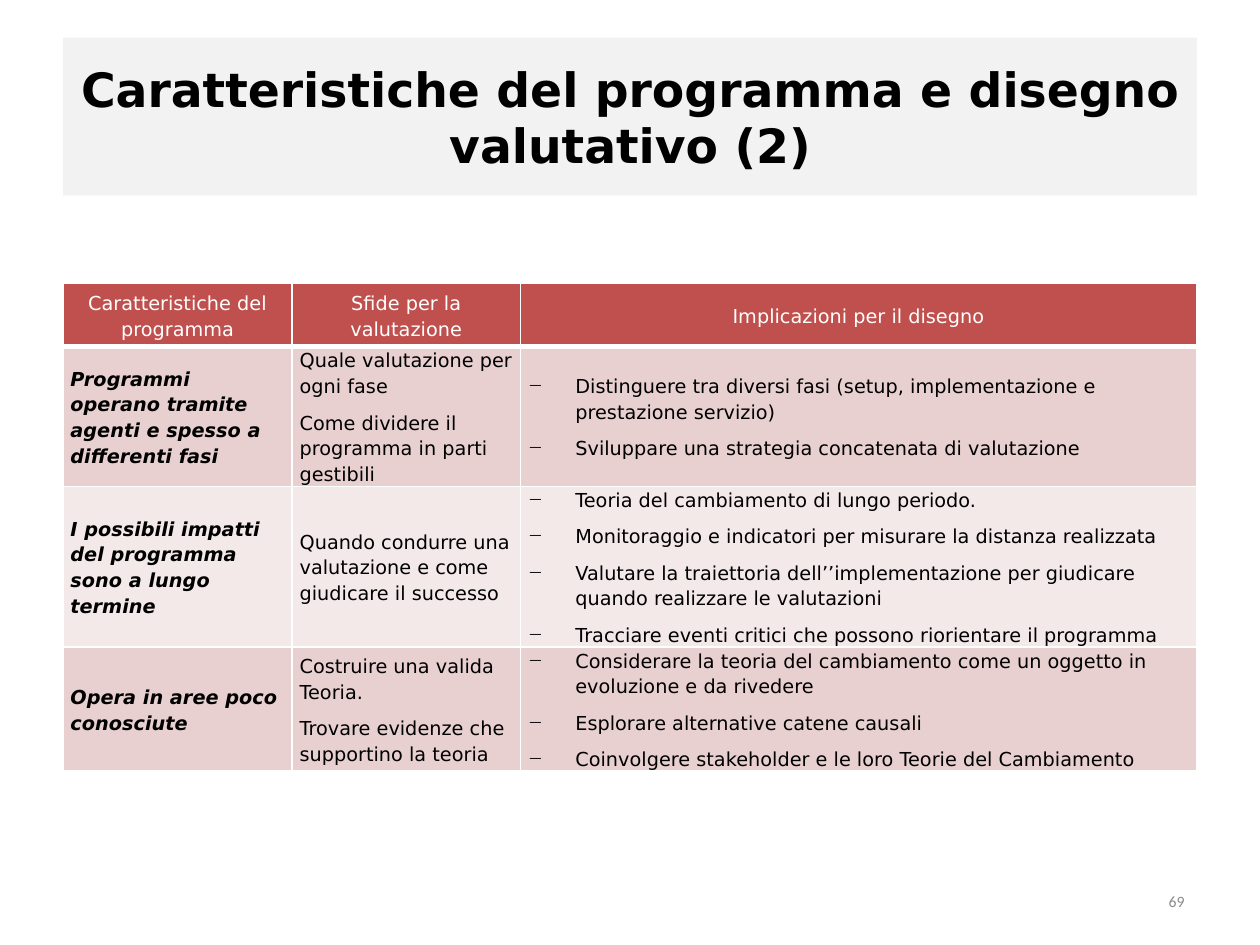
from dataclasses import dataclass

import pptx
import pptx.dml.color
import pptx.enum.text
import pptx.oxml
import pptx.oxml.ns
import pptx.util
from pptx.util import Cm, Pt

ALIGN = pptx.enum.text.PP_ALIGN
MIDDLE = pptx.enum.text.MSO_ANCHOR.MIDDLE
TEXT_FONT = "DejaVu Sans"
WHITE, BLACK = "FFFFFF", "000000"
HEADER_FILL = "C0504D"
BAND_FILLS = ("E8D0D0", "F4E9E9")
LEFT, WIDTH = 1.27, 22.86
COLUMN_WIDTHS = (4.62, 4.6, 13.64)
HEADER_HEIGHT = 1.27


@dataclass
class ProgramRow:
    height: float
    feature: str
    challenges: list[str]
    implications: list[str]


@dataclass
class CellStyle:
    fill: str
    color: str = BLACK
    emphasis: bool = False
    align: ALIGN = ALIGN.LEFT
    dashes: bool = False
    bottom_border: int = 1


HEADERS = (
    "Caratteristiche del programma",
    "Sfide per la valutazione",
    "Implicazioni per il disegno",
)
ROWS = (
    ProgramRow(
        2.67,
        "Programmi operano tramite agenti e spesso a differenti fasi",
        ["Quale valutazione per ogni fase",
         "Come dividere il programma in parti gestibili"],
        ["Distinguere tra diversi fasi (setup, implementazione e prestazione servizio)",
         "Sviluppare una strategia concatenata di valutazione"],
    ),
    ProgramRow(
        2.97,
        "I possibili impatti del programma sono a lungo termine",
        ["Quando condurre una valutazione e come giudicare il successo"],
        ["Teoria del cambiamento di lungo periodo.",
         "Monitoraggio e indicatori per misurare la distanza realizzata",
         "Valutare la traiettoria dell’’implementazione per giudicare quando realizzare le valutazioni",
         "Tracciare eventi critici che possono riorientare il programma"],
    ),
    ProgramRow(
        2.31,
        "Opera in aree poco conosciute",
        ["Costruire una valida Teoria.",
         "Trovare evidenze che supportino la teoria"],
        ["Considerare la teoria del cambiamento come un oggetto in evoluzione e da rivedere",
         "Esplorare alternative catene causali",
         "Coinvolgere stakeholder e le loro Teorie del Cambiamento"],
    ),
)


def rgb(color: str) -> pptx.dml.color.RGBColor:
    return pptx.dml.color.RGBColor.from_string(color)


def set_font(paragraph, name: str, size: float, color: str,
             bold: bool = False, italic: bool = False) -> None:
    font = paragraph.font
    font.name, font.size = name, Pt(size)
    font.bold, font.italic = bold, italic
    font.color.rgb = rgb(color)


def add_dash(paragraph) -> None:
    properties = paragraph._p.get_or_add_pPr()
    properties.set("marL", str(Cm(0.96)))
    properties.set("indent", str(-Cm(0.96)))
    bullet = pptx.oxml.parse_xml(
        f'<a:buChar {pptx.oxml.ns.nsdecls("a")} char="−"/>')
    properties.append(bullet)


def set_borders(cell, bottom: int) -> None:
    properties = cell._tc.get_or_add_tcPr()
    for side, width in (("L", 1), ("R", 1), ("T", 1), ("B", bottom)):
        properties.append(pptx.oxml.parse_xml(
            f'<a:ln{side} {pptx.oxml.ns.nsdecls("a")} w="{Pt(width)}">'
            f'<a:solidFill><a:srgbClr val="{WHITE}"/></a:solidFill></a:ln{side}>'))


def fill_cell(cell, lines: list[str], style: CellStyle) -> None:
    set_borders(cell, style.bottom_border)
    cell.fill.solid()
    cell.fill.fore_color.rgb = rgb(style.fill)
    cell.vertical_anchor = MIDDLE
    cell.margin_left = cell.margin_right = Cm(0.15)
    cell.margin_top = cell.margin_bottom = 0
    cell.text = "\n".join(lines)
    for paragraph in cell.text_frame.paragraphs:
        paragraph.alignment = style.align
        paragraph.line_spacing = 1.15
        paragraph.space_after = Pt(6)
        if style.dashes:
            add_dash(paragraph)
        set_font(paragraph, TEXT_FONT, 11, style.color, style.emphasis, style.emphasis)


def add_title(slide, text: str) -> None:
    title = slide.shapes.title
    title.left, title.top = Cm(LEFT), Cm(0.76)
    title.width, title.height = Cm(WIDTH), Cm(3.18)
    title.fill.solid()
    title.fill.fore_color.rgb = rgb("F2F2F2")
    frame = title.text_frame
    frame.text = text
    frame.auto_size = pptx.enum.text.MSO_AUTO_SIZE.NONE
    frame.vertical_anchor = MIDDLE
    frame.paragraphs[0].alignment = ALIGN.CENTER
    set_font(frame.paragraphs[0], TEXT_FONT, 27, BLACK, bold=True)


def add_program_table(slide) -> None:
    heights = [HEADER_HEIGHT] + [row.height for row in ROWS]
    table = slide.shapes.add_table(
        len(heights), len(COLUMN_WIDTHS),
        Cm(LEFT), Cm(5.72), Cm(WIDTH), Cm(sum(heights))).table
    for column, width in zip(table.columns, COLUMN_WIDTHS):
        column.width = Cm(width)
    for table_row, height in zip(table.rows, heights):
        table_row.height = Cm(height)

    header_style = CellStyle(HEADER_FILL, WHITE, align=ALIGN.CENTER, bottom_border=3)
    for index, header in enumerate(HEADERS):
        fill_cell(table.cell(0, index), [header], header_style)
    for index, row in enumerate(ROWS):
        fill = BAND_FILLS[index % 2]
        fill_cell(table.cell(index + 1, 0), [row.feature], CellStyle(fill, emphasis=True))
        fill_cell(table.cell(index + 1, 1), row.challenges, CellStyle(fill))
        fill_cell(table.cell(index + 1, 2), row.implications, CellStyle(fill, dashes=True))


def add_page_number(slide, number: str) -> None:
    box = slide.shapes.add_textbox(Cm(18.2), Cm(17.65), Cm(5.93), Cm(1.02))
    frame = box.text_frame
    frame.word_wrap = True
    frame.vertical_anchor = MIDDLE
    frame.text = number
    frame.paragraphs[0].alignment = ALIGN.RIGHT
    set_font(frame.paragraphs[0], "Calibri", 9, "8C8C8C")


def main() -> None:
    presentation = pptx.Presentation()
    presentation.slide_width, presentation.slide_height = Cm(25.4), Cm(19.05)
    # "Title Only" layout
    slide = presentation.slides.add_slide(presentation.slide_layouts[5])
    add_title(slide, "Caratteristiche del programma e disegno valutativo (2)")
    add_program_table(slide)
    add_page_number(slide, "69")
    presentation.save("out.pptx")


if __name__ == "__main__":
    main()
